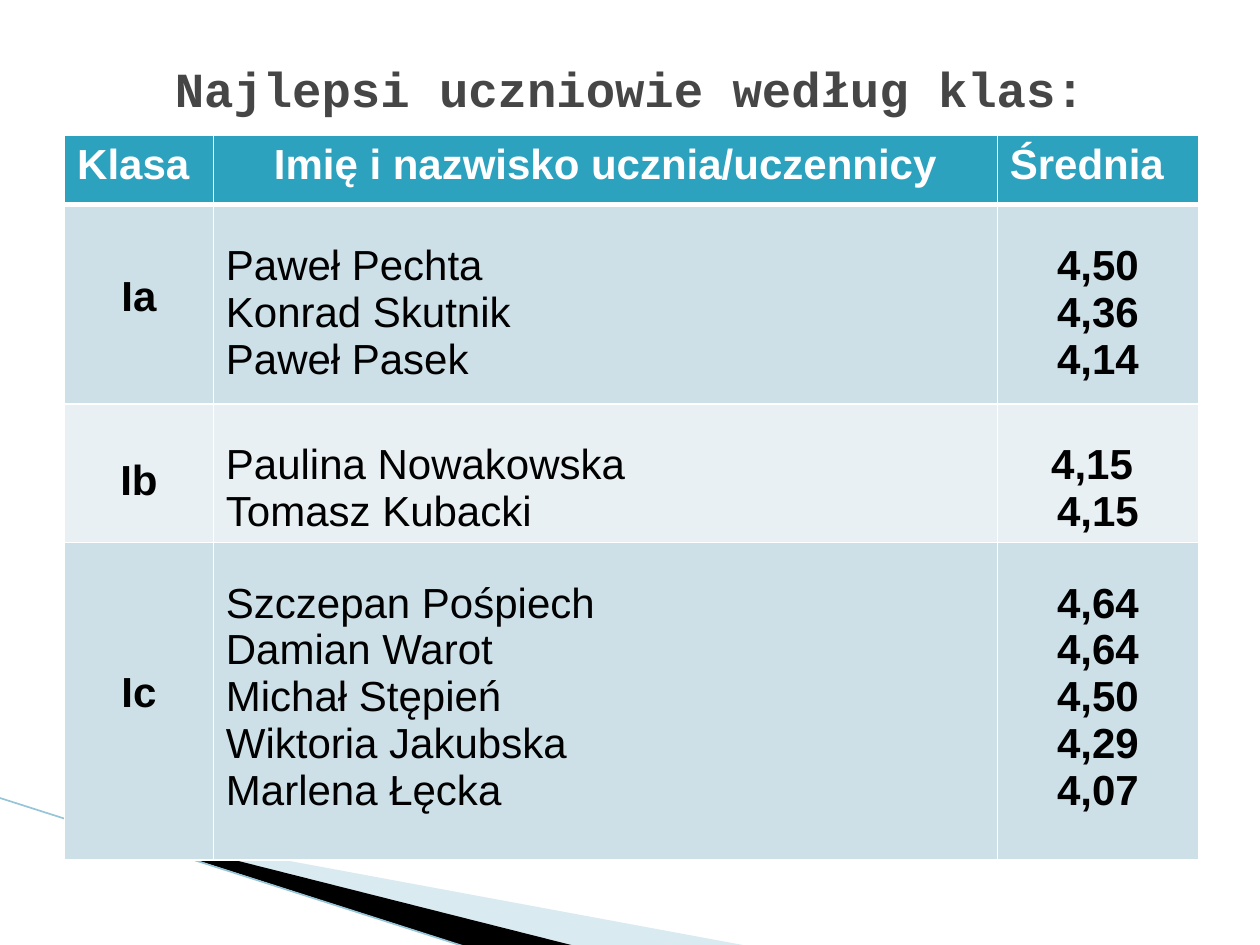
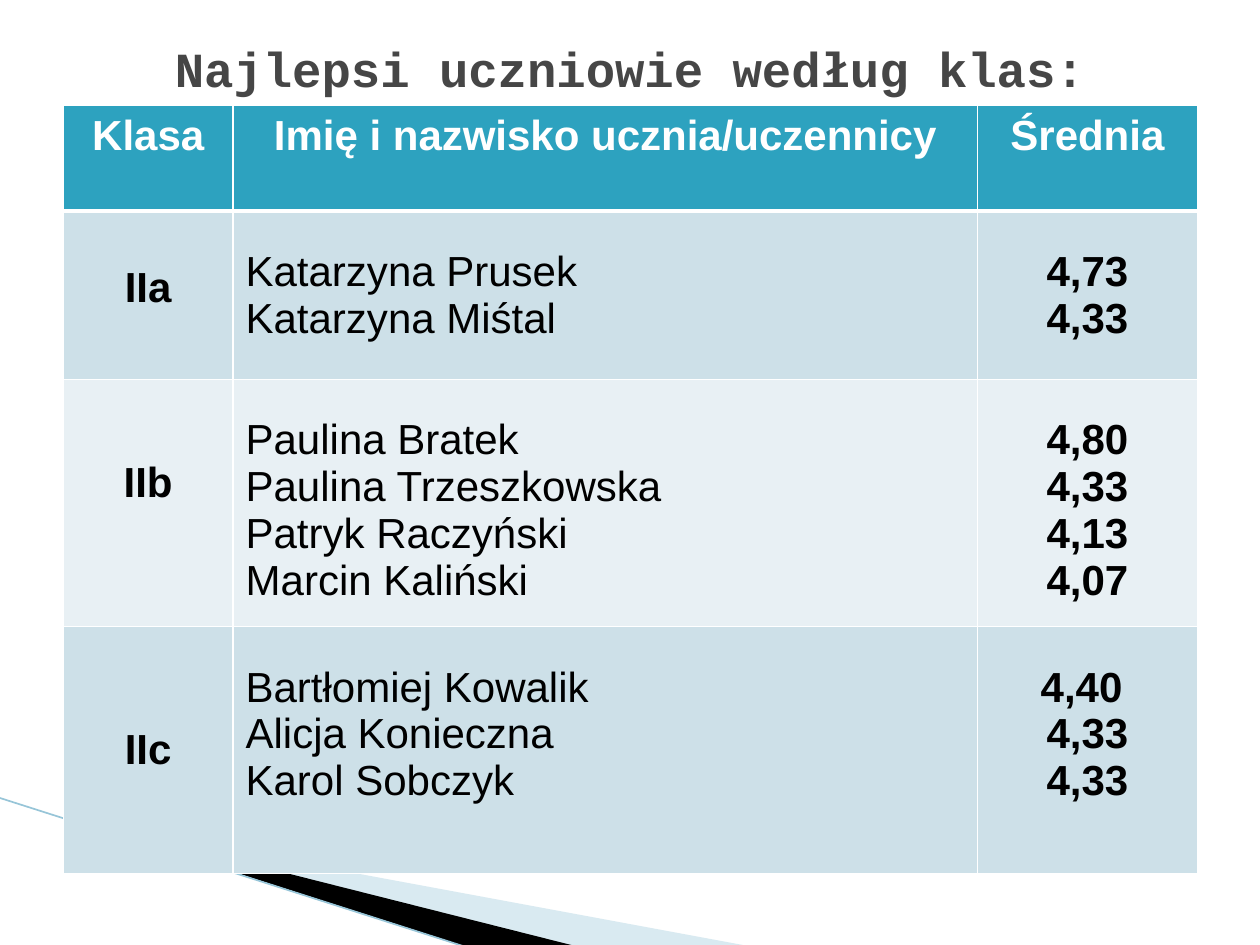
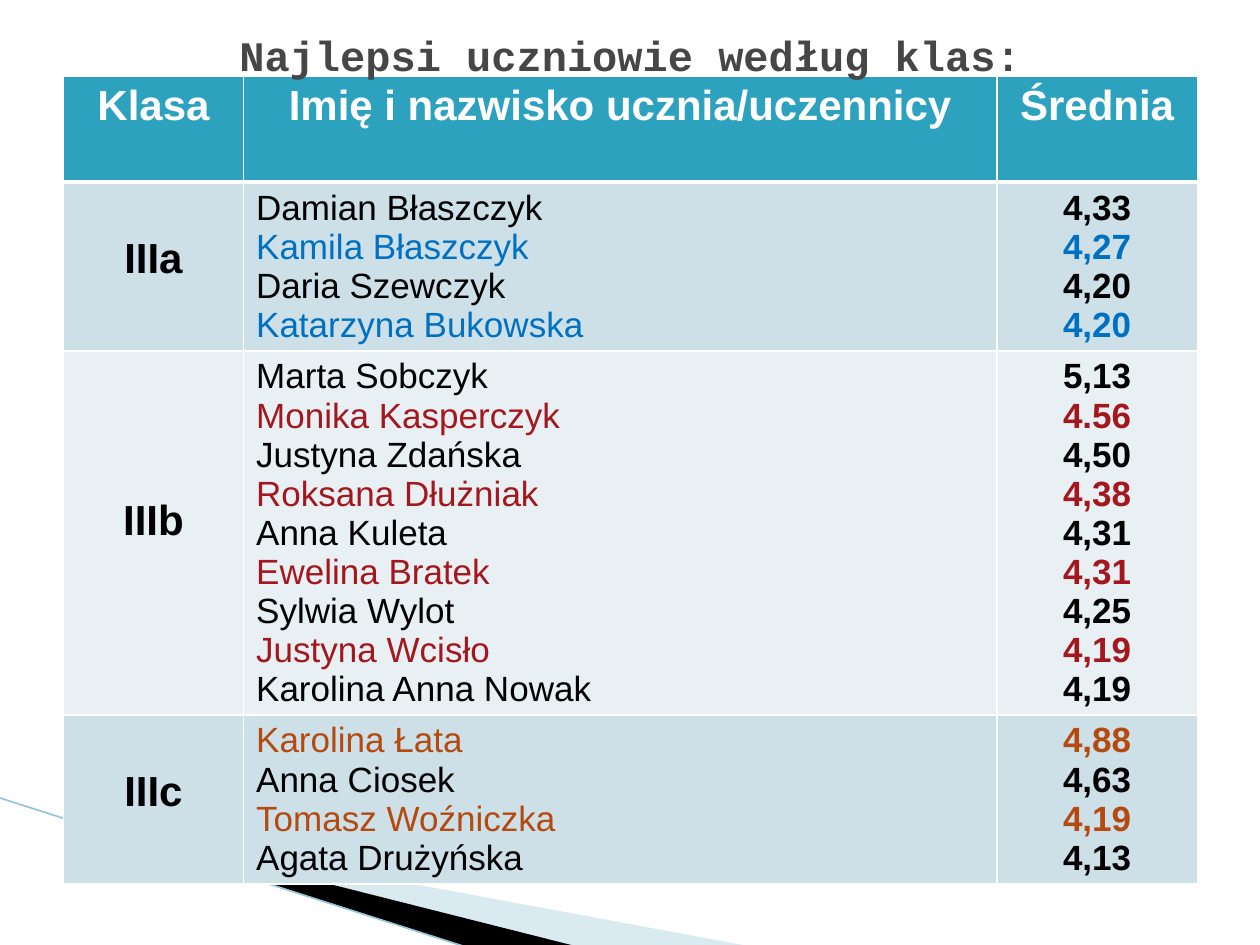
from dataclasses import dataclass

from lxml import etree
from pptx import Presentation
from pptx.dml.color import RGBColor
from pptx.enum.shapes import MSO_CONNECTOR
from pptx.enum.text import MSO_ANCHOR, PP_ALIGN
from pptx.oxml.ns import qn
from pptx.util import Pt

LEFT = PP_ALIGN.LEFT
CENTER = PP_ALIGN.CENTER
MIDDLE = MSO_ANCHOR.MIDDLE
STRAIGHT = MSO_CONNECTOR.STRAIGHT


@dataclass(frozen=True)
class Theme:
    title_font: str = "Courier New"
    body_font: str = "Arial"
    title_color: str = "464646"
    text: str = "000000"
    white: str = "FFFFFF"
    header: str = "2DA2BF"
    bands: tuple = ("CDE0E8", "E8F0F4")
    wedge: str = "A0CBDC"
    wedge_edge: str = "97C5D8"
    blue: str = "0070C0"
    red: str = "A3171E"
    orange: str = "B54A10"
    large: int = 28
    normal: int = 24
    small: int = 20
    border: int = 1
    header_border: int = 3
    inset: float = 3.6
    names_top: float = 21.5


theme = Theme()

TITLE = "Najlepsi uczniowie według klas:"
HEADERS = ("Klasa", "Imię i nazwisko ucznia/uczennicy", "Średnia")
WEDGES = (
    (theme.wedge, 40, ((39.6, 468.7), (428.4, 540.7), (328.3, 540.7), (39.6, 468))),
    (theme.text, 100, ((38.2, 467.3), (329, 540.7), (267.8, 541.4), (38.9, 468))),
)

PAGES = [
    {
        "title_top": 21.6, "title_height": 49.7, "title_size": theme.large,
        "table_left": 36.9, "table_top": 77.4,
        "columns": (85, 448, 115), "rows": (39.6, 113.8, 79.2, 181.4),
        "header_align": (LEFT, CENTER, LEFT),
        "list_size": theme.normal, "list_top": theme.names_top,
        "classes": [
            ("Ia", 39.3, theme.text, 0, [
                ("Paweł Pechta", "4,50"), ("Konrad Skutnik", "4,36"), ("Paweł Pasek", "4,14")]),
            ("Ib", 30.4, theme.text, 0, [
                ("Paulina Nowakowska", "4,15 "), ("Tomasz Kubacki", "4,15")]),
            ("Ic", 72.8, theme.text, 0, [
                ("Szczepan Pośpiech", "4,64"), ("Damian Warot", "4,64"),
                ("Michał Stępień", "4,50"), ("Wiktoria Jakubska", "4,29"),
                ("Marlena Łęcka", "4,07")]),
        ],
    },
    {
        "title_top": -24.5, "title_height": 118.8, "title_size": theme.large,
        "table_left": 36.2, "table_top": 60.4,
        "columns": (97, 425.5, 125.5), "rows": (60.2, 96.2, 141.2, 141.2),
        "header_align": (CENTER, CENTER, CENTER),
        "list_size": theme.normal, "list_top": theme.names_top,
        "classes": [
            ("IIa", 30.4, theme.text, 0, [
                ("Katarzyna Prusek", "4,73"), ("Katarzyna Miśtal", "4,33")]),
            ("IIb", 46, theme.text, 0, [
                ("Paulina Bratek", "4,80"), ("Paulina Trzeszkowska", "4,33"),
                ("Patryk Raczyński", "4,13"), ("Marcin Kaliński", "4,07")]),
            ("IIc", 57.2, theme.text, 0, [
                ("Bartłomiej Kowalik", "4,40 "), ("Alicja Konieczna", "4,33"),
                ("Karol Sobczyk", "4,33")]),
        ],
    },
    {
        "title_top": 0, "title_height": 54.7, "title_size": theme.normal,
        "table_left": 36.2, "table_top": 43.4,
        "columns": (103, 430.5, 114.5), "rows": (60.7, 96.3, 208, 96.3),
        "header_align": (CENTER, CENTER, CENTER),
        "list_size": theme.small, "list_top": theme.inset,
        "classes": [
            ("IIIa", 30.4, theme.blue, 1, [
                ("Damian Błaszczyk", "4,33"), ("Kamila Błaszczyk", "4,27"),
                ("Daria Szewczyk", "4,20"), ("Katarzyna Bukowska", "4,20")]),
            ("IIIb", 84, theme.red, 1, [
                ("Marta Sobczyk", "5,13"), ("Monika Kasperczyk", "4.56"),
                ("Justyna Zdańska", "4,50"), ("Roksana Dłużniak", "4,38"),
                ("Anna Kuleta", "4,31"), ("Ewelina Bratek", "4,31"),
                ("Sylwia Wylot", "4,25"), ("Justyna Wcisło", "4,19"),
                ("Karolina Anna Nowak", "4,19")]),
            ("IIIc", 30.4, theme.orange, 0, [
                ("Karolina Łata", "4,88"), ("Anna Ciosek", "4,63"),
                ("Tomasz Woźniczka", "4,19"), ("Agata Drużyńska", "4,13")]),
        ],
    },
]


def write_lines(text_frame, lines, colors, font, size, bold, align):
    text_frame.text = "\n".join(lines)
    for paragraph, color in zip(text_frame.paragraphs, colors):
        paragraph.alignment = align
        for run in paragraph.runs:
            run.font.name = font
            run.font.size = Pt(size)
            run.font.bold = bold
            run.font.color.rgb = RGBColor.from_string(color)


def style_cell(cell, fill, top, top_border, bottom_border):
    cell.margin_top = Pt(top)
    cell.margin_bottom = Pt(theme.inset)
    cell.fill.solid()
    cell.fill.fore_color.rgb = RGBColor.from_string(fill)
    properties = cell._tc.get_or_add_tcPr()
    widths = (theme.border, theme.border, top_border, bottom_border)
    for position, (side, width) in enumerate(zip("LRTB", widths)):
        line = etree.Element(qn(f"a:ln{side}"), w=str(Pt(width)))
        line_fill = etree.SubElement(line, qn("a:solidFill"))
        etree.SubElement(line_fill, qn("a:srgbClr"), val=theme.white)
        properties.insert(position, line)


presentation = Presentation()
presentation.slide_width = Pt(720)
presentation.slide_height = Pt(540)
blank_layout = presentation.slide_layouts[6]

for page in PAGES:
    slide = presentation.slides.add_slide(blank_layout)

    for color, opacity, points in WEDGES:
        corners = [(Pt(x), Pt(y)) for x, y in points]
        builder = slide.shapes.build_freeform(*corners[0])
        builder.add_line_segments(corners[1:])
        wedge = builder.convert_to_shape()
        wedge.shadow.inherit = False
        wedge.line.fill.background()
        wedge.fill.solid()
        wedge.fill.fore_color.rgb = RGBColor.from_string(color)
        if opacity < 100:
            color_element = wedge._element.spPr.find(".//" + qn("a:srgbClr"))
            etree.SubElement(color_element, qn("a:alpha"), val=str(opacity * 1000))

    edge = slide.shapes.add_connector(STRAIGHT, Pt(-0.7), Pt(455.8), Pt(267.1), Pt(541.4))
    edge.line.color.rgb = RGBColor.from_string(theme.wedge_edge)
    edge.line.width = Pt(0.95)
    etree.SubElement(edge._element.spPr, qn("a:effectLst"))

    table = slide.shapes.add_table(
        len(page["rows"]), len(page["columns"]), Pt(page["table_left"]), Pt(page["table_top"]),
        Pt(sum(page["columns"])), Pt(sum(page["rows"]))).table
    table.first_row = False
    table.horz_banding = False
    for column, width in zip(table.columns, page["columns"]):
        column.width = Pt(width)
    for row, height in zip(table.rows, page["rows"]):
        row.height = Pt(height)

    for cell, header, align in zip(table.rows[0].cells, HEADERS, page["header_align"]):
        write_lines(cell.text_frame, [header], [theme.white],
                    theme.body_font, theme.normal, True, align)
        style_cell(cell, theme.header, theme.inset, theme.border, theme.header_border)

    for index, (label, label_top, accent, accent_parity, students) in enumerate(page["classes"]):
        names, averages = zip(*students)
        colors = [accent if number % 2 == accent_parity else theme.text
                  for number in range(len(students))]
        top_border = theme.border if index else theme.header_border
        columns = (
            ([label], [theme.text], theme.normal, True, CENTER, label_top),
            (names, colors, page["list_size"], False, LEFT, page["list_top"]),
            (averages, colors, page["list_size"], True, CENTER, page["list_top"]),
        )
        for cell, (lines, line_colors, size, bold, align, top) in zip(
                table.rows[index + 1].cells, columns):
            write_lines(cell.text_frame, lines, line_colors, theme.body_font, size, bold, align)
            style_cell(cell, theme.bands[index % 2], top, top_border, theme.border)

    title = slide.shapes.add_textbox(
        Pt(36), Pt(page["title_top"]), Pt(648), Pt(page["title_height"]))
    title.text_frame.word_wrap = True
    title.text_frame.vertical_anchor = MIDDLE
    title.text_frame.margin_top = Pt(8)
    title.text_frame.margin_bottom = 0
    write_lines(title.text_frame, [TITLE], [theme.title_color],
                theme.title_font, page["title_size"], True, CENTER)

presentation.save("out.pptx")
